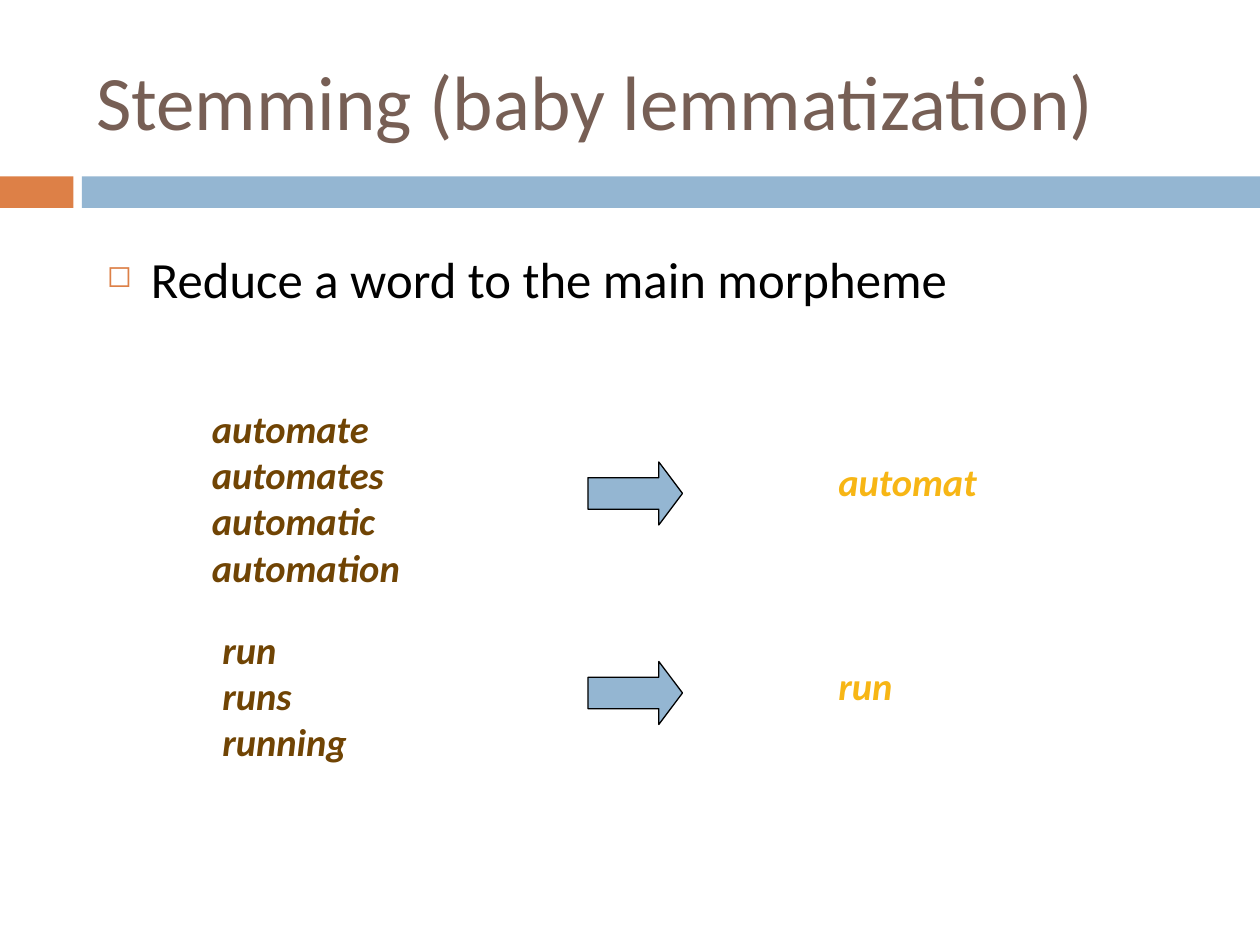
from pptx import Presentation
from pptx.dml.color import RGBColor
from pptx.enum.shapes import MSO_SHAPE as Shape
from pptx.enum.text import MSO_ANCHOR as Anchor
from pptx.util import Pt
from lxml.etree import SubElement
from pptx.oxml.ns import qn

BLUE, ORANGE = "94B6D2", "DD8047"


def color(value):
    return RGBColor.from_string(value)


def add_text(box, lines, size, ink, emphasis=False):
    frame = slide.shapes.add_textbox(*map(Pt, box)).text_frame
    frame.word_wrap = True
    frame.text = "\n".join(lines)
    for paragraph in frame.paragraphs:
        font = paragraph.font
        font.name, font.size = "Calibri", Pt(size)
        font.color.rgb = color(ink)
        font.bold = font.italic = emphasis
    return frame


deck = Presentation()
deck.slide_width, deck.slide_height = Pt(720), Pt(540)
slide = deck.slides.add_slide(deck.slide_layouts[6])

for left, width, fill in [(0, 42, ORANGE), (46.8, 673.2, BLUE)]:
    band = slide.shapes.add_shape(Shape.RECTANGLE, Pt(left), Pt(100.8), Pt(width), Pt(18))
    band.shadow.inherit = False
    band.fill.solid()
    band.fill.fore_color.rgb = color(fill)
    band.line.fill.background()

title = add_text((48, 18, 642, 78), ["Stemming (baby lemmatization)"], 44, "775F55")
title.vertical_anchor = Anchor.MIDDLE

definition = add_text((54, 138, 612, 54), ["Reduce a word to the main morpheme"], 29, "000000")
definition.paragraphs[0].space_before = Pt(7)
bullet = definition.paragraphs[0]._p.get_or_add_pPr()
bullet.set("marL", str(Pt(25.2)))
bullet.set("indent", str(Pt(-25.2)))
bullet_parts = [
    SubElement(SubElement(bullet, qn("a:buClr")), qn("a:srgbClr"), val=ORANGE).getparent(),
    SubElement(bullet, qn("a:buSzPct"), val="60000"),
    SubElement(bullet, qn("a:buChar"), char="◻"),
]
defaults = bullet.find(qn("a:defRPr"))
for part in bullet_parts:
    defaults.addprevious(part)

examples = [
    (["automate", "automates", "automatic", "automation"], (114, 228, 144.5, 113), 264,
     "automat", (472, 258, 109.5, 34)),
    (["run", "runs", "running"], (120, 354, 104.5, 86.5), 378,
     "run", (472, 374.5, 54, 34)),
]
for words, words_box, arrow_top, stem, stem_box in examples:
    add_text(words_box, words, 22, "704404", True)
    arrow = slide.shapes.add_shape(Shape.RIGHT_ARROW, Pt(336), Pt(arrow_top), Pt(54), Pt(36))
    arrow.adjustments[0], arrow.adjustments[1] = 0.5, 0.375
    arrow.shadow.inherit = False
    arrow.fill.solid()
    arrow.fill.fore_color.rgb = color(BLUE)
    arrow.line.color.rgb = color("000000")
    arrow.line.width = Pt(0.75)
    add_text(stem_box, [stem], 22, "F7B615", True)

deck.save("out.pptx")
